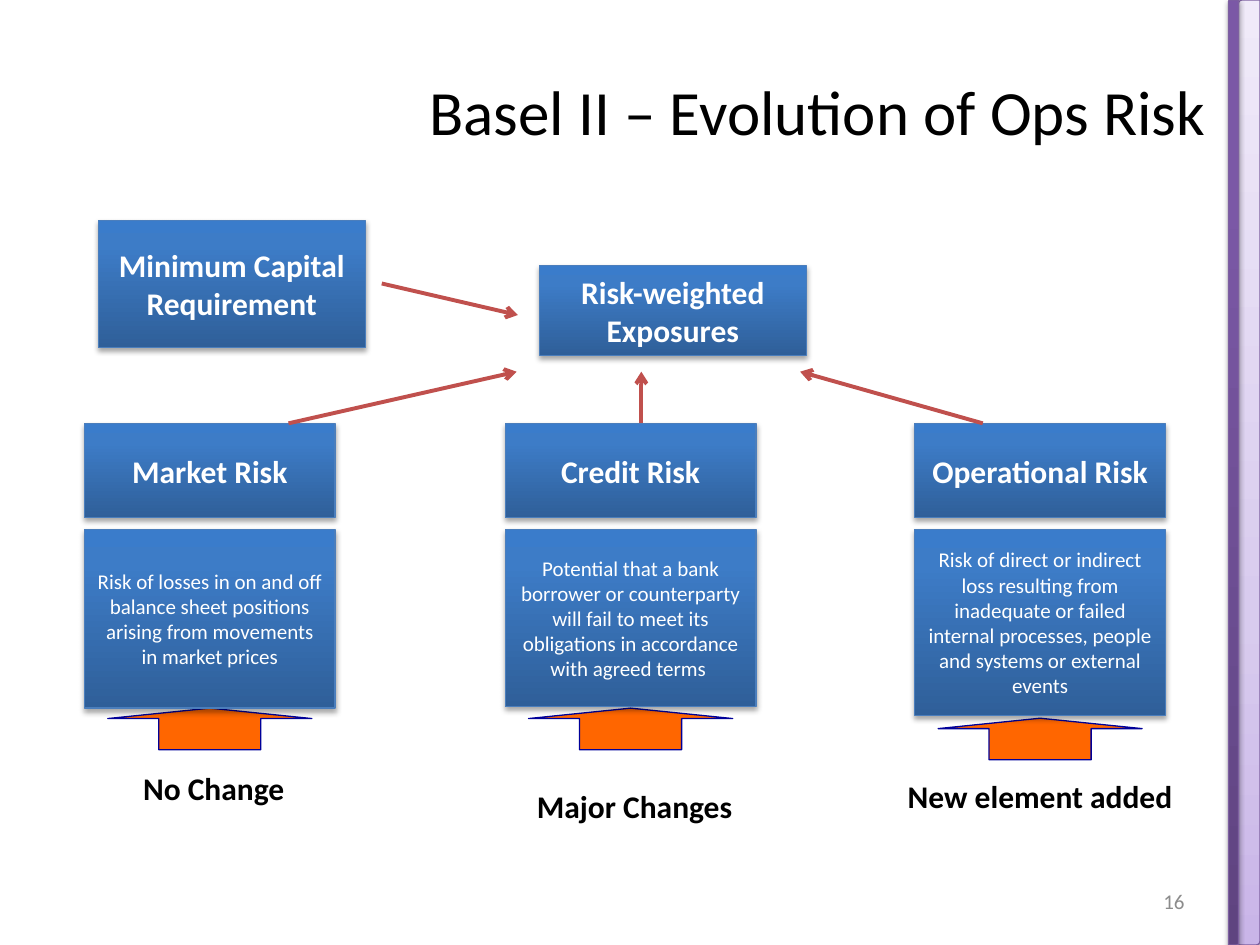
from lxml import etree
from pptx import Presentation
from pptx import util as u
from pptx.dml.color import RGBColor
from pptx.enum import shapes, text
from pptx.oxml import parse_xml
from pptx.oxml.ns import nsdecls, qn

COLORS = {
    "black": "000000", "white": "FFFFFF", "number": "8C8C8C",
    "box_line": "4B7EBC", "bar_line": "7D60A0", "connector": "C0504D",
    "arrow": "FF6600", "arrow_line": "000099",
}
BLUE = [(0, "2F5F99"), (80, "3D7CC7"), (100, "3A7CCB")]
PURPLE = [(0, "5F4480"), (80, "7B58A6"), (100, "7C57A8")]
LILAC = [(0, "C9B5E8"), (35, "D8CBEE"), (100, "F0EAF9")]

TITLE = "Basel II – Evolution of Ops Risk"
PAGE_NUMBER = "16"
# left, width, gradient stops, shadow opacity, shadow distance
SIDE_BARS = [(9.83, 0.17, LILAC, 38, 1.6), (9.75, 0.08, PURPLE, 35, 1.8)]
TOP_BOXES = [
    ("Minimum Capital Requirement", (0.78, 1.75, 2.12, 1.01)),
    ("Risk-weighted Exposures", (4.28, 2.11, 2.12, 0.71)),
]
# name, definition, left, definition height, arrow top, change, change label place
RISKS = [
    ("Market Risk",
     "Risk of losses in on and off balance sheet positions arising from "
     "movements in market prices",
     0.67, 1.42, 5.62, "No Change ", (0.76, 6.05, 1.93, 0.4)),
    ("Credit Risk",
     "Potential that a bank borrower or counterparty will fail to meet its "
     "obligations in accordance with agreed terms ",
     4.01, 1.41, 5.62, "Major Changes ", (4.1, 6.05, 1.93, 0.7)),
    ("Operational Risk",
     "Risk of direct or indirect loss resulting from inadequate or failed "
     "internal processes, people and systems or external events",
     7.26, 1.48, 5.7, "New element added", (6.99, 5.97, 2.53, 0.7)),
]
RISK_TOP, RISK_WIDTH, RISK_HEIGHT, DEFINITION_TOP = 3.36, 1.99, 0.75, 4.2
ARROW_LENGTH, ARROW_SPAN = 0.33, 1.62
CONNECTORS = [
    ((2.29, RISK_TOP), (4.1, 2.95)),
    ((5.09, RISK_TOP), (5.09, 2.95)),
    ((7.8, RISK_TOP), (6.35, 2.95)),
    ((3.03, 2.25), (4.11, 2.5)),
]


def color(name):
    return RGBColor.from_string(COLORS[name])


def inches(values):
    return [u.Inches(value) for value in values]


def write(shape, words, size, color_name, bold=False, align=text.PP_ALIGN.CENTER):
    frame = shape.text_frame
    frame.word_wrap = True
    frame.vertical_anchor = text.MSO_ANCHOR.MIDDLE
    paragraph = frame.paragraphs[0]
    paragraph.alignment = align
    run = paragraph.add_run()
    run.text = words
    run.font.name = "Calibri"
    run.font.size = u.Pt(size)
    run.font.bold = bold
    run.font.color.rgb = color(color_name)


def add_text(slide, place, *args, **kwargs):
    write(slide.shapes.add_textbox(*inches(place)), *args, **kwargs)


def add_shape(slide, kind, place, line):
    shape = slide.shapes.add_shape(kind, *inches(place))
    shape.shadow.inherit = False
    shape.line.color.rgb = color(line)
    shape.line.width = u.Pt(0.75)
    return shape


def add_raised_shape(slide, kind, place, stops, line, opacity=35, distance=1.8):
    """Add a shape with a bottom-to-top gradient and a soft shadow below."""
    shape = add_shape(slide, kind, place, line)
    stop_xml = "".join(
        f'<a:gs pos="{position * 1000}"><a:srgbClr val="{value}"/></a:gs>'
        for position, value in stops)
    shape.line._ln.addprevious(parse_xml(
        f'<a:gradFill rotWithShape="1" {nsdecls("a")}><a:gsLst>{stop_xml}</a:gsLst>'
        '<a:lin ang="16200000" scaled="0"/></a:gradFill>'))
    effects = shape._element.spPr.find(qn("a:effectLst"))
    effects.append(parse_xml(
        f'<a:outerShdw {nsdecls("a")} blurRad="{u.Pt(3.1)}" dist="{u.Pt(distance)}" '
        'dir="5400000" rotWithShape="0"><a:srgbClr val="000000">'
        f'<a:alpha val="{opacity * 1000}"/></a:srgbClr></a:outerShdw>'))
    return shape


def add_box(slide, place, words, size, bold):
    box = add_raised_shape(slide, shapes.MSO_SHAPE.RECTANGLE, place, BLUE, "box_line")
    write(box, words, size, "white", bold)


def add_up_arrow(slide, center, top):
    """Add a wide right arrow turned a quarter to point up."""
    place = (center - ARROW_LENGTH / 2, top + (ARROW_LENGTH - ARROW_SPAN) / 2,
             ARROW_LENGTH, ARROW_SPAN)
    arrow = add_shape(slide, shapes.MSO_SHAPE.RIGHT_ARROW, place, "arrow_line")
    arrow.adjustments[0] = 0.5
    arrow.adjustments[1] = 0.25
    arrow.rotation = 270
    arrow.fill.solid()
    arrow.fill.fore_color.rgb = color("arrow")


def add_connector(slide, start, end):
    connector = slide.shapes.add_connector(
        shapes.MSO_CONNECTOR.STRAIGHT, *inches(start + end))
    connector.line.color.rgb = color("connector")
    connector.line.width = u.Pt(2.25)
    etree.SubElement(connector.line._ln, qn("a:tailEnd"), type="arrow")
    etree.SubElement(connector._element.spPr, qn("a:effectLst"))


def main():
    presentation = Presentation()
    presentation.slide_width, presentation.slide_height = inches((10, 7.5))
    slide = presentation.slides.add_slide(presentation.slide_layouts[5])

    for left, width, stops, opacity, distance in SIDE_BARS:
        add_raised_shape(slide, shapes.MSO_SHAPE.ROUND_2_DIAG_RECTANGLE,
                         (left, 0, width, 7.5), stops, "bar_line", opacity, distance)

    title = slide.shapes.title
    title.left, title.top, title.width, title.height = inches((1.92, 0.5, 7.75, 0.75))
    write(title, TITLE, 36, "black", align=text.PP_ALIGN.RIGHT)
    add_text(slide, (7.17, 6.95, 2.33, 0.4), PAGE_NUMBER, 12, "number",
             align=text.PP_ALIGN.RIGHT)

    for words, place in TOP_BOXES:
        add_box(slide, place, words, 18, True)
    for name, definition, left, height, arrow_top, change, label_place in RISKS:
        add_up_arrow(slide, left + RISK_WIDTH / 2, arrow_top)
        add_box(slide, (left, RISK_TOP, RISK_WIDTH, RISK_HEIGHT), name, 18, True)
        add_box(slide, (left, DEFINITION_TOP, RISK_WIDTH, height), definition, 12, False)
        add_text(slide, label_place, change, 18, "black", True)
    for start, end in CONNECTORS:
        add_connector(slide, start, end)

    presentation.save("out.pptx")


if __name__ == "__main__":
    main()
